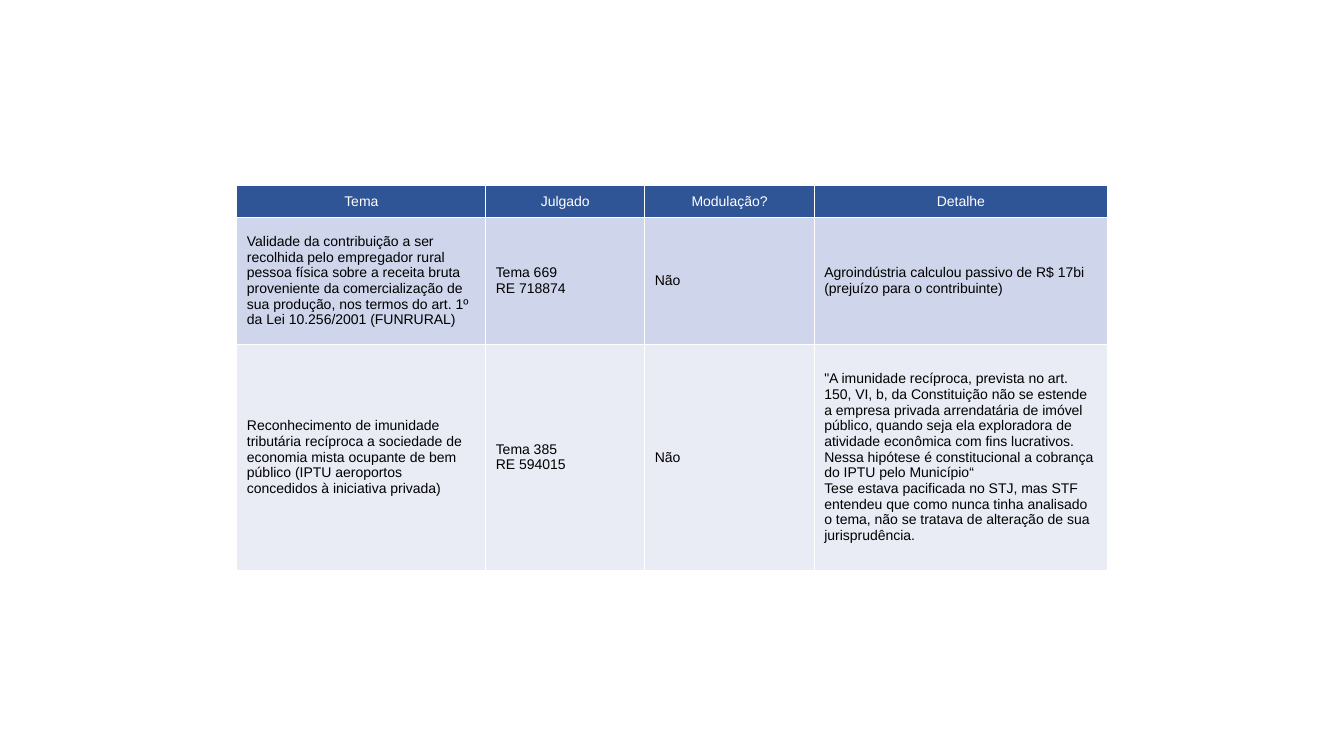
"""Build a slide with a table of tax rulings and whether their effects were modulated."""
from lxml import etree
from pptx import Presentation
from pptx import util as u
from pptx.dml import color
from pptx.enum import text
from pptx.oxml import ns


def paint(target, value):
    target.rgb = color.RGBColor.from_string(value)


def add_border(cell, side):
    line = etree.SubElement(cell._tc.get_or_add_tcPr(), ns.qn(f"a:{side}"), w=str(u.Pt(1)))
    fill = etree.SubElement(line, ns.qn("a:solidFill"))
    etree.SubElement(fill, ns.qn("a:srgbClr"), val="FFFFFF")


rulings = [
    [["Tema"], ["Julgado"], ["Modulação?"], ["Detalhe"]],
    [
        ["Validade da contribuição a ser recolhida pelo empregador rural pessoa física "
         "sobre a receita bruta proveniente da comercialização de sua produção, nos termos "
         "do art. 1º da Lei 10.256/2001 (FUNRURAL)"],
        ["Tema 669", "RE 718874"],
        ["Não"],
        ["Agroindústria calculou passivo de R$ 17bi", "(prejuízo para o contribuinte)"],
    ],
    [
        ["Reconhecimento de imunidade tributária recíproca a sociedade de economia mista "
         "ocupante de bem público (IPTU aeroportos concedidos à iniciativa privada)"],
        ["Tema 385", "RE 594015"],
        ["Não"],
        ['"A imunidade recíproca, prevista no art. 150, VI, b, da Constituição não se estende '
         "a empresa privada arrendatária de imóvel público, quando seja ela exploradora de "
         "atividade econômica com fins lucrativos. Nessa hipótese é constitucional a cobrança "
         "do IPTU pelo Município“",
         "Tese estava pacificada no STJ, mas STF entendeu que como nunca tinha analisado o "
         "tema, não se tratava de alteração de sua jurisprudência."],
    ],
]
widths = [6.27, 4.01, 4.27, 7.39]
heights = [0.81, 3.2, 5.69]
row_fills = ["2F5597", "CFD5EA", "E9EBF5"]

deck = Presentation()
deck.slide_width, deck.slide_height = u.Cm(33.87), u.Cm(19.05)
slide = deck.slides.add_slide(deck.slide_layouts[6])
table = slide.shapes.add_table(
    len(heights), len(widths), u.Cm(5.97), u.Cm(4.67), u.Cm(sum(widths)), u.Cm(sum(heights))
).table

for column, width in zip(table.columns, widths):
    column.width = u.Cm(width)

for row, height, row_fill, entries in zip(table.rows, heights, row_fills, rulings):
    row.height = u.Cm(height)
    is_header = entries is rulings[0]
    for cell, lines in zip(row.cells, entries):
        for side in ("lnL", "lnR", "lnT", "lnB"):
            add_border(cell, side)
        cell.fill.solid()
        paint(cell.fill.fore_color, row_fill)
        cell.vertical_anchor = text.MSO_ANCHOR.MIDDLE
        frame = cell.text_frame
        for index, line in enumerate(lines):
            para = frame.add_paragraph() if index else frame.paragraphs[0]
            para.alignment = text.PP_ALIGN.CENTER if is_header else text.PP_ALIGN.LEFT
            span = para.add_run()
            span.text = line
            span.font.name = "Arial"
            span.font.size = u.Pt(10)
            span.font.bold = False
            paint(span.font.color, "FFFFFF" if is_header else "000000")

deck.save("out.pptx")
